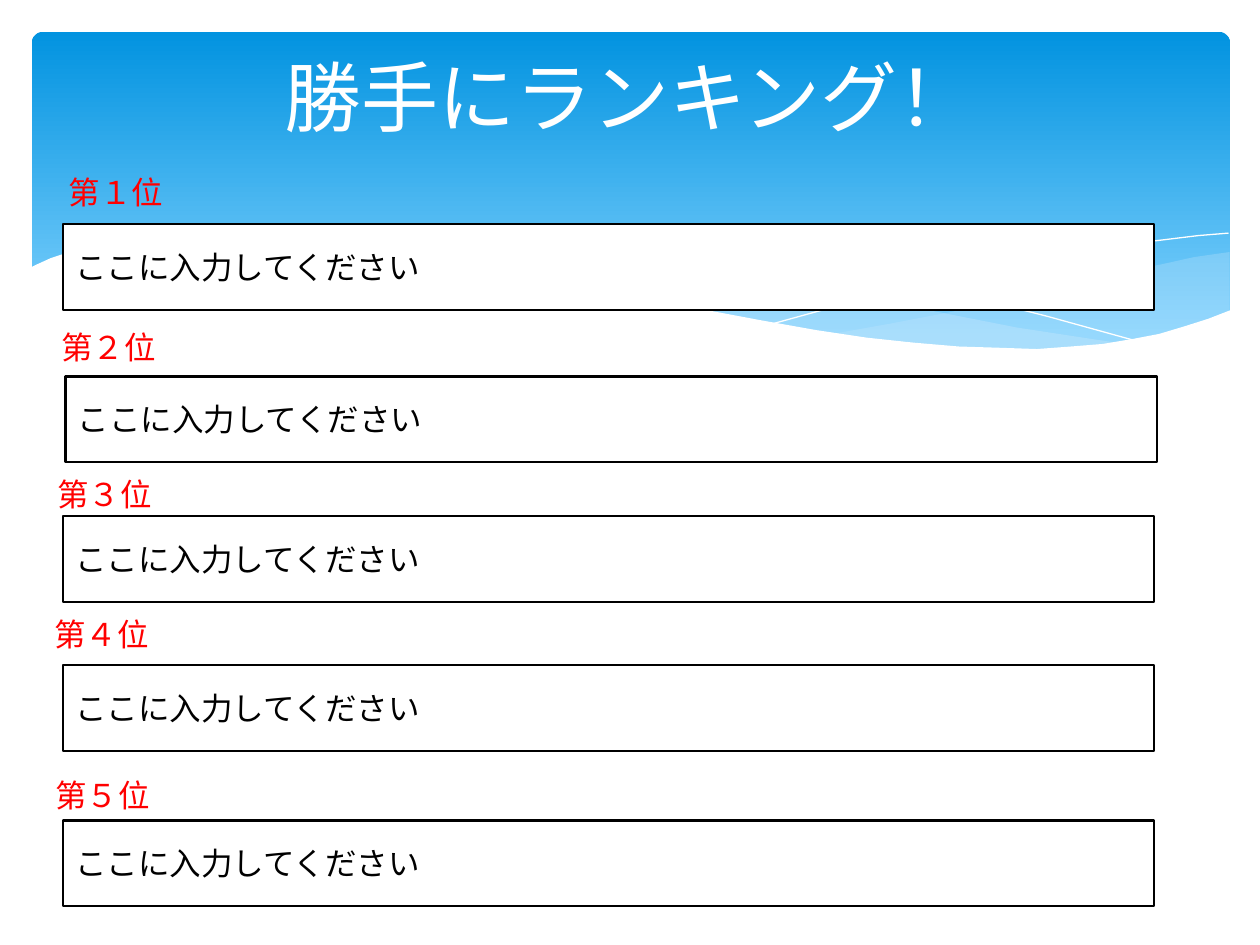
from lxml import etree
from pptx import Presentation
from pptx.dml.color import RGBColor
from pptx.enum.shapes import MSO_SHAPE
from pptx.enum.text import MSO_ANCHOR, PP_ALIGN
from pptx.oxml.ns import qn
from pptx.util import Cm, Pt

ROUNDED = MSO_SHAPE.ROUNDED_RECTANGLE
RECTANGLE = MSO_SHAPE.RECTANGLE
MIDDLE = MSO_ANCHOR.MIDDLE
LEFT, CENTER = PP_ALIGN.LEFT, PP_ALIGN.CENTER
WHITE, BLACK, RED, PALE_BLUE = "FFFFFF", "000000", "FF0000", "C6E7FC"
WAVE_UNIT = Cm(0.0254)  # wave points are hundredths of an inch

# Points, fill colour (None for a white hairline), opacity in percent
WAVES = [
    ([(976, 200), (948, 204), (921, 210), (891, 216), (861, 223), (805, 237),
      (753, 248), (706, 257), (661, 265), (691, 269), (719, 271), (745, 275),
      (781, 277), (814, 278), (854, 276), (881, 273), (905, 269), (928, 263),
      (949, 257), (976, 247)], PALE_BLUE, 29),
    ([(893, 273), (866, 269), (807, 260), (741, 247), (668, 231), (598, 214),
      (541, 203), (489, 194), (442, 189), (399, 186), (361, 185), (313, 188),
      (286, 191), (342, 199), (404, 211), (491, 232), (566, 248), (634, 261),
      (695, 270), (748, 276), (796, 278), (848, 277), (893, 273)], PALE_BLUE, 40),
    ([(309, 195), (335, 191), (374, 188), (416, 187), (469, 189), (533, 194),
      (582, 200), (636, 208), (695, 219), (760, 233), (831, 251), (907, 272)],
     None, 100),
    ([(613, 257), (653, 246), (695, 235), (748, 223), (806, 210), (866, 199),
      (910, 192), (951, 187), (975, 185)], None, 100),
    ([(977, 246), (959, 253), (940, 259), (920, 265), (899, 269), (875, 273),
      (850, 275), (823, 277), (793, 276), (761, 275), (726, 272), (688, 268),
      (648, 262), (603, 254), (555, 245), (503, 233), (447, 220), (391, 207),
      (340, 197), (292, 190), (250, 186), (211, 184), (161, 184), (132, 186),
      (106, 189), (85, 193), (67, 197), (52, 201), (40, 205), (29, 210),
      (23, 213), (23, 329), (977, 329)], WHITE, 100),
]

# Label left, top and height, then answer box left and top, in centimetres
RANKS = [
    ("第１位", 1.14, 3.02, 1.7, 1.27, 4.52),
    ("第２位", 0.99, 6.15, 1.7, 1.32, 7.59),
    ("第３位", 0.91, 8.92, 2.08, 1.27, 10.41),
    ("第４位", 0.84, 11.73, 2.08, 1.27, 13.41),
    ("第５位", 0.86, 15.09, 1.88, 1.27, 16.54),
]


def rgb(value):
    return RGBColor.from_string(value)


def write_text(shape, text, size, color, alignment=LEFT):
    frame = shape.text_frame
    frame.word_wrap = True
    frame.vertical_anchor = MIDDLE
    paragraph = frame.paragraphs[0]
    paragraph.text = text
    paragraph.alignment = alignment
    paragraph.font.name = "Calibri"
    paragraph.font.size = Pt(size)
    paragraph.font.color.rgb = rgb(color)


presentation = Presentation()
presentation.slide_width = Cm(25.4)
presentation.slide_height = Cm(19.05)
slide = presentation.slides.add_slide(presentation.slide_layouts[6])
shapes = slide.shapes

# Blue header panel
panel = shapes.add_shape(ROUNDED, Cm(0.64), Cm(0.64), Cm(24.16), Cm(6.86))
panel.adjustments[0] = 0.034
panel.shadow.inherit = False
panel.line.fill.background()
panel.fill.gradient()
panel.fill.gradient_angle = 270
top_stop, bottom_stop = panel.fill.gradient_stops
top_stop.color.rgb = rgb("0293E0")
top_stop.position = 0
bottom_stop.color.rgb = rgb("83D3FE")
bottom_stop.position = 0.9

# Waves along the lower edge of the panel
for points, color, opacity in WAVES:
    builder = shapes.build_freeform(*points[0], scale=WAVE_UNIT)
    builder.add_line_segments(points[1:], close=color is not None)
    wave = builder.convert_to_shape()
    wave.shadow.inherit = False
    if color is None:
        wave.fill.background()
        wave.line.color.rgb = rgb(WHITE)
        wave.line.width = Pt(0)
        continue
    wave.line.fill.background()
    wave.fill.solid()
    wave.fill.fore_color.rgb = rgb(color)
    if opacity < 100:
        fill_color = wave.element.spPr.find(qn("a:solidFill"))[0]
        etree.SubElement(fill_color, qn("a:alpha"), val=str(opacity * 1000))

title = shapes.add_textbox(Cm(1.27), Cm(0.76), Cm(22.86), Cm(2.36))
write_text(title, "勝手にランキング！", 44, WHITE, CENTER)

# Five ranks, each a red label above an answer box
for rank, label_left, label_top, label_height, box_left, box_top in RANKS:
    label = shapes.add_textbox(Cm(label_left), Cm(label_top), Cm(22.86), Cm(label_height))
    write_text(label, rank, 18, RED)

    box = shapes.add_shape(RECTANGLE, Cm(box_left), Cm(box_top), Cm(22), Cm(1.73))
    box.shadow.inherit = False
    box.fill.solid()
    box.fill.fore_color.rgb = rgb(WHITE)
    box.line.color.rgb = rgb(BLACK)
    box.line.width = Pt(1.25)
    write_text(box, "ここに入力してください", 18, BLACK)

presentation.save("out.pptx")
